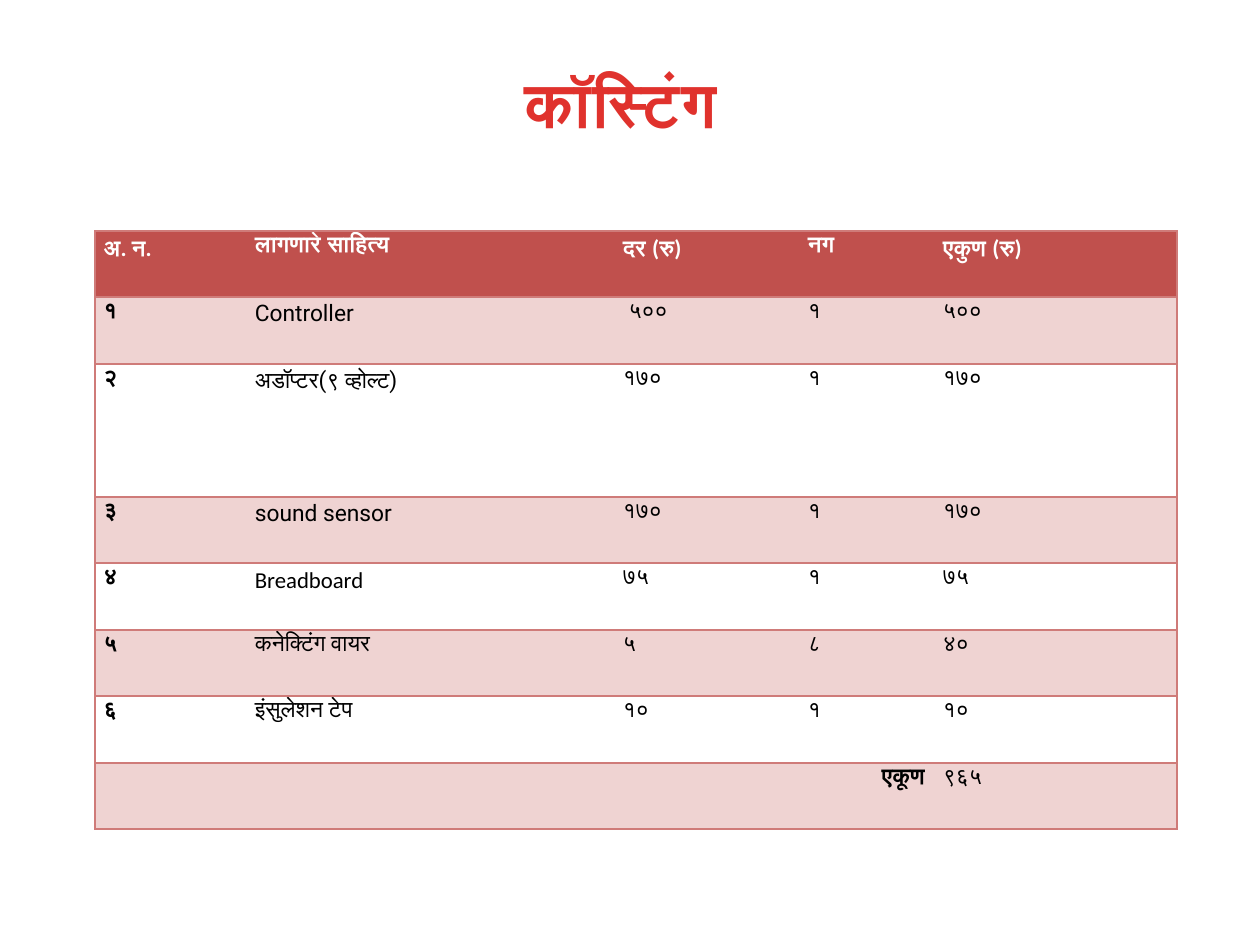
import pptx
import pptx.dml.color
import pptx.enum.text
import pptx.oxml.ns
import pptx.util
import lxml.etree

PX = 914400 // 126
RGBColor = pptx.dml.color.RGBColor
RED = RGBColor(0xE0, 0x32, 0x2D)
HEADER = RGBColor(0xC0, 0x50, 0x4D)
BAND = RGBColor(0xEF, 0xD3, 0xD2)
BORDER = RGBColor(0xCF, 0x7B, 0x79)
WHITE = RGBColor(0xFF, 0xFF, 0xFF)
BLACK = RGBColor(0, 0, 0)
ALIGN = pptx.enum.text.PP_ALIGN
NO_GRID_STYLE = "{2D5ABB26-0587-4C30-8999-92F81FD0307C}"

COLUMN_WIDTHS = [151, 368, 185, 135, 243]
ROW_EDGES = [231, 297, 364, 497, 563, 630, 696, 763, 829]
COSTS = [
    ["अ. न.", "लागणारे साहित्य", "दर (रु)", "नग", "एकुण (रु)"],
    ["१", "Controller", " ५००", "१", "५००"],
    ["२", "अडॉप्टर(९ व्होल्ट)", "१७०", "१", "१७०"],
    ["३", "sound sensor", "१७०", "१", "१७०"],
    ["४", "Breadboard", "७५", "१", "७५"],
    ["५", "कनेक्टिंग वायर", "५", "८", "४०"],
    ["६", "इंसुलेशन टेप", "१०", "१", "१०"],
    ["एकूण", None, None, None, "९६५"],
]
CALIBRI_BODY = {(1, 0), (2, 0), (3, 0), (4, 0), (4, 1), (4, 3)}


def write(para, text, color, **formats):
    span = para.add_run()
    span.text = text
    span.font.color.rgb = color
    for name, value in formats.items():
        setattr(span.font, name, value)
    return span


def add_border(cell, side):
    properties = cell._tc.get_or_add_tcPr()
    line = lxml.etree.SubElement(properties, pptx.oxml.ns.qn(f"a:ln{side}"), w="12700")
    fill = lxml.etree.SubElement(line, pptx.oxml.ns.qn("a:solidFill"))
    lxml.etree.SubElement(fill, pptx.oxml.ns.qn("a:srgbClr"), val=str(BORDER))


deck = pptx.Presentation()
deck.slide_width, deck.slide_height = pptx.util.Inches(10), pptx.util.Inches(7.5)
page = deck.slides.add_slide(deck.slide_layouts[6])

title_box = page.shapes.add_textbox(0, 0, 1260 * PX, 204 * PX)
title_box.text_frame.word_wrap = True
title_box.text_frame.vertical_anchor = pptx.enum.text.MSO_ANCHOR.MIDDLE
title_para = title_box.text_frame.paragraphs[0]
title_para.alignment = ALIGN.CENTER
title_span = write(title_para, "कॉस्टिंग ", RED, size=pptx.util.Pt(36), name="Montserrat", bold=True)
title_span._r.get_or_add_rPr().set("spc", "50")

frame = page.shapes.add_table(
    len(COSTS), len(COLUMN_WIDTHS), 95 * PX, ROW_EDGES[0] * PX,
    sum(COLUMN_WIDTHS) * PX, (ROW_EDGES[-1] - ROW_EDGES[0]) * PX)
table = frame.table
table.first_row = table.horz_banding = False
table._tbl.tblPr.find(pptx.oxml.ns.qn("a:tableStyleId")).text = NO_GRID_STYLE
for column, width in zip(table.columns, COLUMN_WIDTHS):
    column.width = width * PX
for row, top, bottom in zip(table.rows, ROW_EDGES, ROW_EDGES[1:]):
    row.height = (bottom - top) * PX

last_row, last_column = len(COSTS) - 1, len(COLUMN_WIDTHS) - 1
table.cell(last_row, 0).merge(table.cell(last_row, last_column - 1))

for row_index, values in enumerate(COSTS):
    is_header = row_index == 0
    for column_index, text in enumerate(values):
        cell = table.cell(row_index, column_index)
        margins = {"margin_left": 9, "margin_right": 9, "margin_top": 0, "margin_bottom": 0}
        for name, value in margins.items():
            setattr(cell, name, value * PX)
        if column_index == 0:
            add_border(cell, "L")
        if column_index == last_column:
            add_border(cell, "R")
        add_border(cell, "T")
        add_border(cell, "B")
        if is_header or row_index % 2:
            cell.fill.solid()
            cell.fill.fore_color.rgb = HEADER if is_header else BAND
        else:
            cell.fill.background()
        if text is None:
            continue
        para = cell.text_frame.paragraphs[0]
        para.line_spacing = 1.15
        if column_index == last_column:
            para.space_after = pptx.util.Pt(10)
        if row_index == last_row and column_index == 0:
            para.alignment = ALIGN.RIGHT
        uses_calibri = is_header or (row_index, column_index) in CALIBRI_BODY
        write(para, text, WHITE if is_header else BLACK, size=pptx.util.Pt(13),
              name="Calibri" if uses_calibri else "Roboto",
              bold=is_header or column_index == 0)

deck.save("out.pptx")
